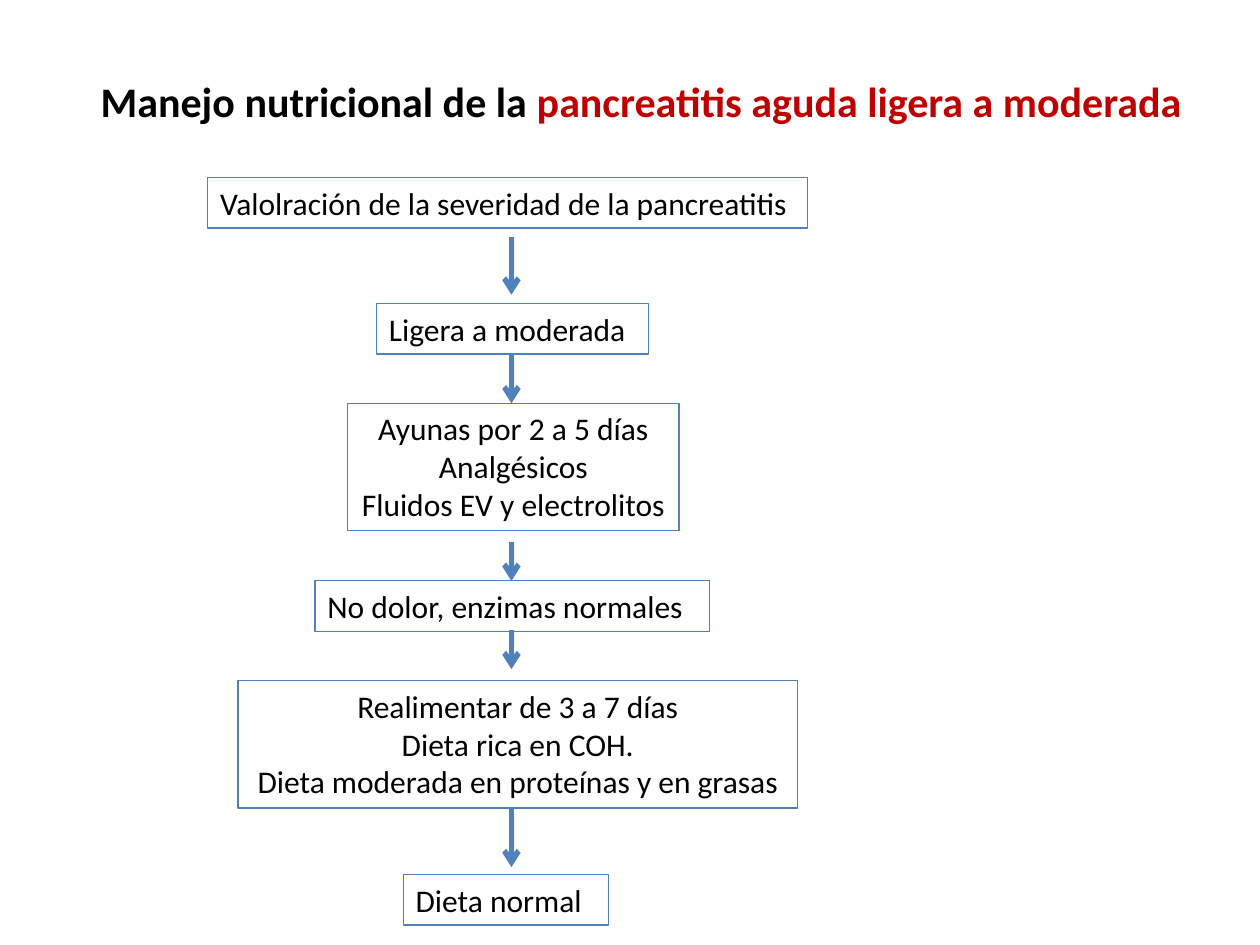
from typing import NamedTuple

from lxml import etree
from pptx import Presentation
from pptx import util as u
from pptx.dml.color import RGBColor
from pptx.enum import shapes, text
from pptx.oxml import ns

BLUE, BLACK, RED = "4F81BD", "000000", "C00000"
FONT = "Calibri"
ARROW_X = 10.31
LINE_HEIGHTS = {1: 1.02, 3: 2.57}


class Step(NamedTuple):
    left: float
    top: float
    width: float
    lines: list[str]


class Arrow(NamedTuple):
    top: float
    bottom: float


STEPS = [
    Step(4.19, 3.58, 12.09, ["Valolración de la severidad de la pancreatitis"]),
    Step(7.59, 6.12, 5.49, ["Ligera a moderada"]),
    Step(7.01, 8.13, 6.68,
         ["Ayunas por 2 a 5 días", "Analgésicos", "Fluidos EV y electrolitos"]),
    Step(6.35, 11.71, 7.95, ["No dolor, enzimas normales"]),
    Step(4.8, 13.72, 11.28,
         ["Realimentar de 3 a 7 días", "Dieta rica en COH.",
          "Dieta moderada en proteínas y en grasas"]),
    Step(8.13, 17.63, 4.14, ["Dieta normal"]),
]
ARROWS = [Arrow(4.78, 5.94), Arrow(7.14, 8.13), Arrow(10.92, 11.71),
          Arrow(12.7, 13.49), Arrow(16.28, 17.48)]


def color(value: str) -> RGBColor:
    return RGBColor.from_string(value)


def add_run(paragraph, content: str, *, size: int = 18, fill: str = BLACK,
            bold: bool = False) -> None:
    run = paragraph.add_run()
    run.text = content
    run.font.name = FONT
    run.font.size = u.Pt(size)
    run.font.bold = bold
    run.font.color.rgb = color(fill)


def set_frame(shape, *, wrap: bool) -> None:
    frame = shape.text_frame
    frame.word_wrap = wrap
    frame.auto_size = text.MSO_AUTO_SIZE.SHAPE_TO_FIT_TEXT
    frame.vertical_anchor = text.MSO_ANCHOR.TOP


def add_title(slide) -> None:
    title = slide.shapes.add_textbox(u.Cm(1.78), u.Cm(1.4), u.Cm(22.53), u.Cm(1.27))
    set_frame(title, wrap=True)
    paragraph = title.text_frame.paragraphs[0]
    add_run(paragraph, "Manejo nutricional de la ", size=24, bold=True)
    add_run(paragraph, "pancreatitis aguda ligera a moderada", size=24, fill=RED, bold=True)


def add_step(slide, step: Step) -> None:
    count = len(step.lines)
    shape = slide.shapes.add_shape(
        shapes.MSO_SHAPE.RECTANGLE, u.Cm(step.left), u.Cm(step.top),
        u.Cm(step.width), u.Cm(LINE_HEIGHTS[count]))
    shape.shadow.inherit = False
    shape.fill.background()
    shape.line.color.rgb = color(BLUE)
    shape.line.width = u.Pt(0.75)
    set_frame(shape, wrap=count == 1)
    frame = shape.text_frame
    for index, line in enumerate(step.lines):
        paragraph = frame.add_paragraph() if index else frame.paragraphs[0]
        paragraph.alignment = text.PP_ALIGN.LEFT if count == 1 else text.PP_ALIGN.CENTER
        add_run(paragraph, line)


def add_arrow(slide, arrow: Arrow) -> None:
    connector = slide.shapes.add_connector(
        shapes.MSO_CONNECTOR.STRAIGHT, u.Cm(ARROW_X), u.Cm(arrow.top),
        u.Cm(ARROW_X), u.Cm(arrow.bottom))
    connector.line.color.rgb = color(BLUE)
    connector.line.width = u.Pt(3)
    # Arrowhead, and no inherited shadow
    line = connector.line._get_or_add_ln()
    etree.SubElement(line, ns.qn("a:tailEnd"), type="arrow")
    etree.SubElement(connector._element.spPr, ns.qn("a:effectLst"))


def main() -> None:
    presentation = Presentation()
    presentation.slide_width = u.Cm(25.4)
    presentation.slide_height = u.Cm(19.05)
    slide = presentation.slides.add_slide(presentation.slide_layouts[6])

    # Heading
    add_title(slide)

    # Treatment steps, then the flow between them
    for step in STEPS:
        add_step(slide, step)
    for arrow in ARROWS:
        add_arrow(slide, arrow)

    presentation.save("out.pptx")


if __name__ == "__main__":
    main()
